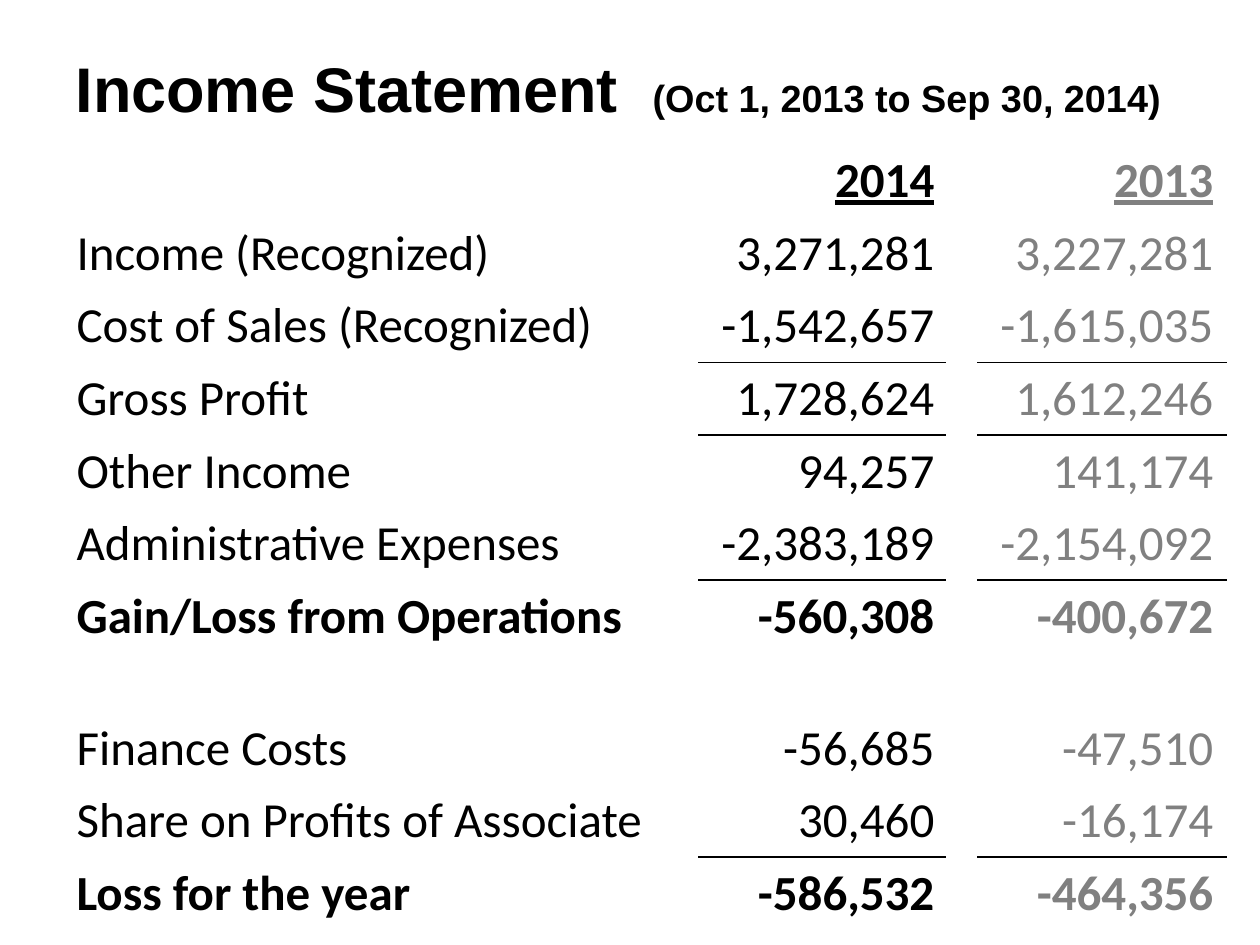
"""Build the income statement slide with its two-year comparison table."""
from dataclasses import dataclass

import lxml.etree
import pptx
import pptx.dml.color
import pptx.enum.text
import pptx.oxml.ns
import pptx.util

EMU_PER_PX = 914400 / 126


@dataclass(frozen=True)
class Theme:
    current: str = "000000"
    previous: str = "808080"
    rule: str = "000000"
    heading_face: str = "Arial"
    body_face: str = "Calibri"
    heading_size: float = 36
    period_size: float = 21.6
    body_size: float = 28
    spacer_size: int = 22
    rule_width: float = 1


def px(length):
    return pptx.util.Emu(round(length * EMU_PER_PX))


def child(parent, tag, **attributes):
    return lxml.etree.SubElement(parent, pptx.oxml.ns.qn(tag), **attributes)


class StatementSlide:
    def __init__(self, presentation, theme):
        self.theme = theme
        self.slide = presentation.slides.add_slide(presentation.slide_layouts[5])

    def add_text(self, paragraph, text, color, **formats):
        run = paragraph.add_run()
        run.text = text
        for name, value in formats.items():
            setattr(run.font, name, value)
        run.font.color.rgb = pptx.dml.color.RGBColor.from_string(color)

    def title(self, heading, period, box, period_offset):
        theme = self.theme
        title = self.slide.shapes.title
        for side, length in zip(("left", "top", "width", "height"), box):
            setattr(title, side, px(length))
        frame = title.text_frame
        frame.auto_size = pptx.enum.text.MSO_AUTO_SIZE.NONE
        frame.vertical_anchor = pptx.enum.text.MSO_ANCHOR.MIDDLE
        paragraph = frame.paragraphs[0]
        paragraph.alignment = pptx.enum.text.PP_ALIGN.LEFT
        stops = child(paragraph._p.get_or_add_pPr(), "a:tabLst")
        child(stops, "a:tab", pos=str(px(period_offset)), algn="l")
        for text, size in ((heading + "\t", theme.heading_size), (period, theme.period_size)):
            self.add_text(paragraph, text, theme.current, name=theme.heading_face,
                          size=pptx.util.Pt(size), bold=True)

    def rule(self, cell, edge):
        line = child(cell._tc.get_or_add_tcPr(), edge, w=str(pptx.util.Pt(self.theme.rule_width)))
        child(child(line, "a:solidFill"), "a:srgbClr", val=self.theme.rule)

    def cell(self, cell, text, color, align, edges, bold, underline):
        theme = self.theme
        paragraph = cell.text_frame.paragraphs[0]
        if text:
            paragraph.alignment = align
            self.add_text(paragraph, text, color, name=theme.body_face, bold=bold,
                          underline=underline, size=pptx.util.Pt(theme.body_size))
        else:
            end = child(paragraph._p, "a:endParaRPr", sz=str(theme.spacer_size * 100))
            child(end, "a:latin", typeface=theme.body_face)
        for edge in edges:
            self.rule(cell, edge)
        cell.fill.background()

    def table(self, rows, totals, ruled, left, top, widths, row_height):
        theme = self.theme
        right = pptx.enum.text.PP_ALIGN.RIGHT
        columns = ((theme.current, pptx.enum.text.PP_ALIGN.LEFT), (theme.current, right),
                   (theme.current, right), (theme.previous, right))
        heights = [row_height if any(row) else row_height // 2 for row in rows]
        table = self.slide.shapes.add_table(
            len(rows), len(widths), px(left), px(top), px(sum(widths)), px(sum(heights))).table
        for flag in ("first_row", "horz_banding"):
            setattr(table, flag, False)
        for column, width in zip(table.columns, widths):
            column.width = px(width)
        above = None
        for index, (label, current, previous) in enumerate(rows):
            table.rows[index].height = px(heights[index])
            edges = [edge for edge, owner in (("a:lnT", above), ("a:lnB", label)) if owner in ruled]
            for place, text in enumerate((label, current, "", previous)):
                color, align = columns[place]
                self.cell(table.cell(index, place), text, color, align,
                          edges if place in (1, 3) else [],
                          bold=index == 0 or label in totals, underline=index == 0)
            above = label


def main():
    presentation = pptx.Presentation()
    presentation.slide_width, presentation.slide_height = px(1260), px(945)
    statement = StatementSlide(presentation, Theme())
    statement.title("Income Statement", "(Oct 1, 2013 to Sep 30, 2014)",
                    box=(63, 37, 1197, 100), period_offset=577)
    rows = (
        ("", "2014", "2013"),
        ("Income (Recognized)", "3,271,281", "3,227,281"),
        ("Cost of Sales (Recognized)", "-1,542,657", "-1,615,035"),
        ("Gross Profit", "1,728,624", "1,612,246"),
        ("Other Income", "94,257", "141,174"),
        ("Administrative Expenses", "-2,383,189", "-2,154,092"),
        ("Gain/Loss from Operations", "-560,308", "-400,672"),
        ("", "", ""),
        ("Finance Costs", "-56,685", "-47,510"),
        ("Share on Profits of Associate", "30,460", "-16,174"),
        ("Loss for the year", "-586,532", "-464,356"),
    )
    statement.table(
        rows,
        totals={"Gain/Loss from Operations", "Loss for the year"},
        ruled={"Cost of Sales (Recognized)", "Gross Profit",
               "Administrative Expenses", "Share on Profits of Associate"},
        left=64, top=145, widths=(635, 248, 31, 248), row_height=66)
    presentation.save("out.pptx")


if __name__ == "__main__":
    main()
